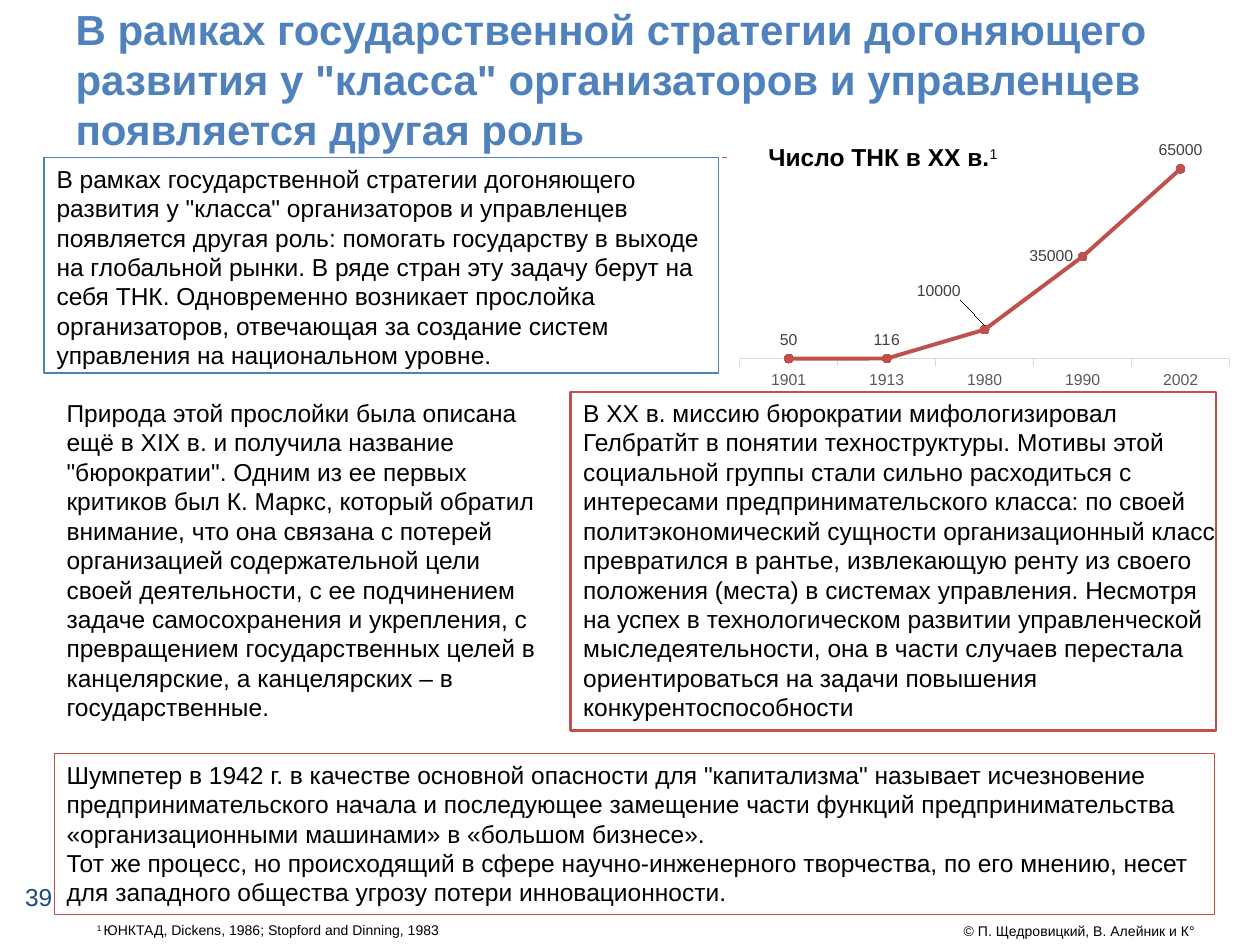
from lxml import etree
from pptx import Presentation
from pptx.chart.data import CategoryChartData
from pptx.dml.color import RGBColor
from pptx.enum.chart import XL_CHART_TYPE as CT, XL_LABEL_POSITION as LP
from pptx.enum.chart import XL_MARKER_STYLE as MS, XL_TICK_LABEL_POSITION as TLP, XL_TICK_MARK as TM
from pptx.enum.dml import MSO_LINE
from pptx.enum.shapes import MSO_CONNECTOR, MSO_SHAPE
from pptx.enum.text import MSO_ANCHOR, MSO_AUTO_SIZE, PP_ALIGN
from pptx.oxml import parse_xml
from pptx.oxml.ns import nsdecls, qn
from pptx.util import Inches, Pt

COLORS = {"blue": "4F81BD", "red": "C0504D", "navy": "1F497D", "black": "000000",
          "white": "FFFFFF", "axis": "D9D9D9", "tick": "595959", "label": "404040"}


def rgb(name):
    return RGBColor.from_string(COLORS[name])


def write(sp, paragraphs, size, color="black", right=0.1, anchor=MSO_ANCHOR.TOP, wrap=True):
    tf = sp.text_frame
    tf.word_wrap = wrap
    tf.vertical_anchor = anchor
    tf.margin_right = Inches(right)
    for i, runs in enumerate(paragraphs):
        p = tf.paragraphs[0] if i == 0 else tf.add_paragraph()
        p.alignment = PP_ALIGN.LEFT
        for text, style in runs:
            r = p.add_run()
            r.text = text
            r.font.name = "Arial"
            r.font.size = Pt(size)
            r.font.bold = style == "bold"
            r.font.color.rgb = rgb(color)
            if style == "super":
                r.font._element.set("baseline", "30000")


prs = Presentation()
prs.slide_width, prs.slide_height = Inches(10), Inches(7.5)
s = prs.slides.add_slide(prs.slide_layouts[5])

title = s.shapes.title
title.left, title.top, title.width, title.height = map(Inches, (0.5, 0, 9.38, 1.25))
write(title, [[("В рамках государственной стратегии догоняющего развития у \"класса\" организаторов "
                "и управленцев появляется другая роль", "bold")]], 24, "blue", anchor=MSO_ANCHOR.MIDDLE)
title.text_frame.auto_size = MSO_AUTO_SIZE.NONE

rule = s.shapes.add_connector(MSO_CONNECTOR.STRAIGHT, Inches(0.5), Inches(1.25), Inches(9.5), Inches(1.25))
rule.line.color.rgb = rgb("red")
rule.line.width = Pt(0.75)
rule.line.dash_style = MSO_LINE.DASH
etree.SubElement(rule._element.spPr, qn("a:effectLst"))

data = CategoryChartData()
data.categories = ["1901", "1913", "1980", "1990", "2002"]
data.add_series("Series 1", [50, 116, 10000, 35000, 65000])
chart = s.shapes.add_chart(CT.LINE_MARKERS, Inches(5.79), Inches(1.12), Inches(4.05), Inches(2.01), data).chart
chart.has_legend = False
chart.has_title = False
chart.font.name = "Arial"
chart.font.size = Pt(10)
chart.font.color.rgb = rgb("black")

cat_axis, val_axis = chart.category_axis, chart.value_axis
cat_axis.major_tick_mark = TM.OUTSIDE
cat_axis.tick_label_position = TLP.LOW
cat_axis.tick_labels.font.size = Pt(9)
cat_axis.tick_labels.font.name = "Arial"
cat_axis.tick_labels.font.color.rgb = rgb("tick")
cat_axis.format.line.color.rgb = rgb("axis")
cat_axis.format.line.width = Pt(0.75)
val_axis.visible = False
val_axis.has_major_gridlines = False
val_axis.minimum_scale, val_axis.maximum_scale = 0, 70000

series = chart.plots[0].series[0]
series.smooth = False
series.format.line.color.rgb = rgb("red")
series.format.line.width = Pt(2.25)
series.marker.style = MS.CIRCLE
series.marker.size = 5
series.marker.format.fill.solid()
series.marker.format.fill.fore_color.rgb = rgb("red")
series.marker.format.line.color.rgb = rgb("red")
labels = series.data_labels
labels.show_value = True
labels.position = LP.ABOVE
shifted, beside = (series.points[i].data_label for i in (2, 3))
shifted.position, beside.position = LP.ABOVE, LP.LEFT
for item in (labels, shifted, beside):
    item.font.name = "Arial"
    item.font.size = Pt(9)
    item.font.color.rgb = rgb("label")

shift = parse_xml(f'<c:layout {nsdecls("c")}><c:manualLayout><c:x val="-0.09"/><c:y val="-0.08"/>'
                  '</c:manualLayout></c:layout>')
labels._element.find(qn("c:dLbl")).find(qn("c:idx")).addnext(shift)

plot_area = chart._chartSpace.chart.plotArea
for old in plot_area.findall(qn("c:layout")):
    plot_area.remove(old)
frame = "".join(f'<c:{k} val="{v}"/>' for k, v in (
    ("layoutTarget", "inner"), ("xMode", "edge"), ("yMode", "edge"),
    ("x", 0.02), ("y", 0.05), ("w", 0.96), ("h", 0.81)))
plot_area.insert(0, parse_xml(f'<c:layout {nsdecls("c")}><c:manualLayout>{frame}</c:manualLayout></c:layout>'))
fill = (f'<c:spPr {nsdecls("c", "a")}><a:solidFill><a:srgbClr val="{COLORS["white"]}"/></a:solidFill>'
        '<a:ln><a:noFill/></a:ln></c:spPr>')
plot_area.append(parse_xml(fill))
chart._chartSpace.chart.addnext(parse_xml(fill))

BOXES = [
    (MSO_SHAPE.ROUNDED_RECTANGLE, (0.35, 1.25, 5.35, 1.71), "white", "blue", 0.75, 0, [
        "В рамках государственной стратегии догоняющего развития у \"класса\" организаторов и управленцев "
        "появляется другая роль: помогать государству в выходе на глобальной рынки. В ряде стран эту задачу "
        "берут на себя ТНК. Одновременно возникает прослойка организаторов, отвечающая за создание систем "
        "управления на национальном уровне."]),
    (MSO_SHAPE.RECTANGLE, (4.53, 3.11, 5.12, 2.69), None, "red", 1.5, 0, [
        "В ХХ в. миссию бюрократии мифологизировал Гелбратйт в понятии техноструктуры. Мотивы этой "
        "социальной группы стали сильно расходиться с интересами предпринимательского класса: по своей "
        "политэкономический сущности организационный класс превратился в рантье, извлекающую ренту из "
        "своего положения (места) в системах управления. Несмотря на успех в технологическом развитии "
        "управленческой мыследеятельности, она в части случаев перестала ориентироваться на задачи "
        "повышения конкурентоспособности"]),
    (MSO_SHAPE.RECTANGLE, (0.43, 5.98, 9.21, 1.28), "white", "red", 0.75, 0.1, [
        "Шумпетер в 1942 г. в качестве основной опасности для \"капитализма\" называет исчезновение "
        "предпринимательского начала и последующее замещение части функций предпринимательства "
        "«организационными машинами» в «большом бизнесе».",
        "Тот же процесс, но происходящий в сфере научно-инженерного творчества, по его мнению, несет "
        "для западного общества угрозу потери инновационности."]),
]
for kind, place, back, border, width, right, paragraphs in BOXES:
    sp = s.shapes.add_shape(kind, *map(Inches, place))
    sp.shadow.inherit = False
    if kind == MSO_SHAPE.ROUNDED_RECTANGLE:
        sp.adjustments[0] = 0
    if back:
        sp.fill.solid()
        sp.fill.fore_color.rgb = rgb(back)
    else:
        sp.fill.background()
    sp.line.color.rgb = rgb(border)
    sp.line.width = Pt(width)
    write(sp, [[(text, None)] for text in paragraphs], 14, right=right)

NOTES = [
    ((7.55, 7.27, 2.42, 0.24), [("© П. Щедровицкий, В. Алейник и К°", None)], 8, {}),
    ((0.1, 6.95, 0.45, 0.4), [("39", None)], 14, {"color": "navy"}),
    ((6, 1.08, 2.08, 0.34), [("Число ТНК в XX в.", "bold"), ("1", "super")], 14, {"wrap": False}),
    ((0.67, 7.26, 4.8, 0.24),
     [("1 ", "super"), ("ЮНКТАД, Dickens, 1986; Stopford and Dinning, 1983", None)], 8,
     {"anchor": MSO_ANCHOR.BOTTOM}),
    ((0.43, 3.11, 3.94, 2.69), [(
        "Природа этой прослойки была описана ещё в XIX в. и получила название \"бюрократии\". Одним из ее "
        "первых критиков был К. Маркс, который обратил внимание, что она связана с потерей организацией "
        "содержательной цели своей деятельности, с ее подчинением задаче самосохранения и укрепления, "
        "с превращением государственных целей в канцелярские, а канцелярских – в государственные.", None)],
     14, {"right": 0}),
]
for place, runs, size, options in NOTES:
    write(s.shapes.add_textbox(*map(Inches, place)), [runs], size, **options)

prs.save("out.pptx")
